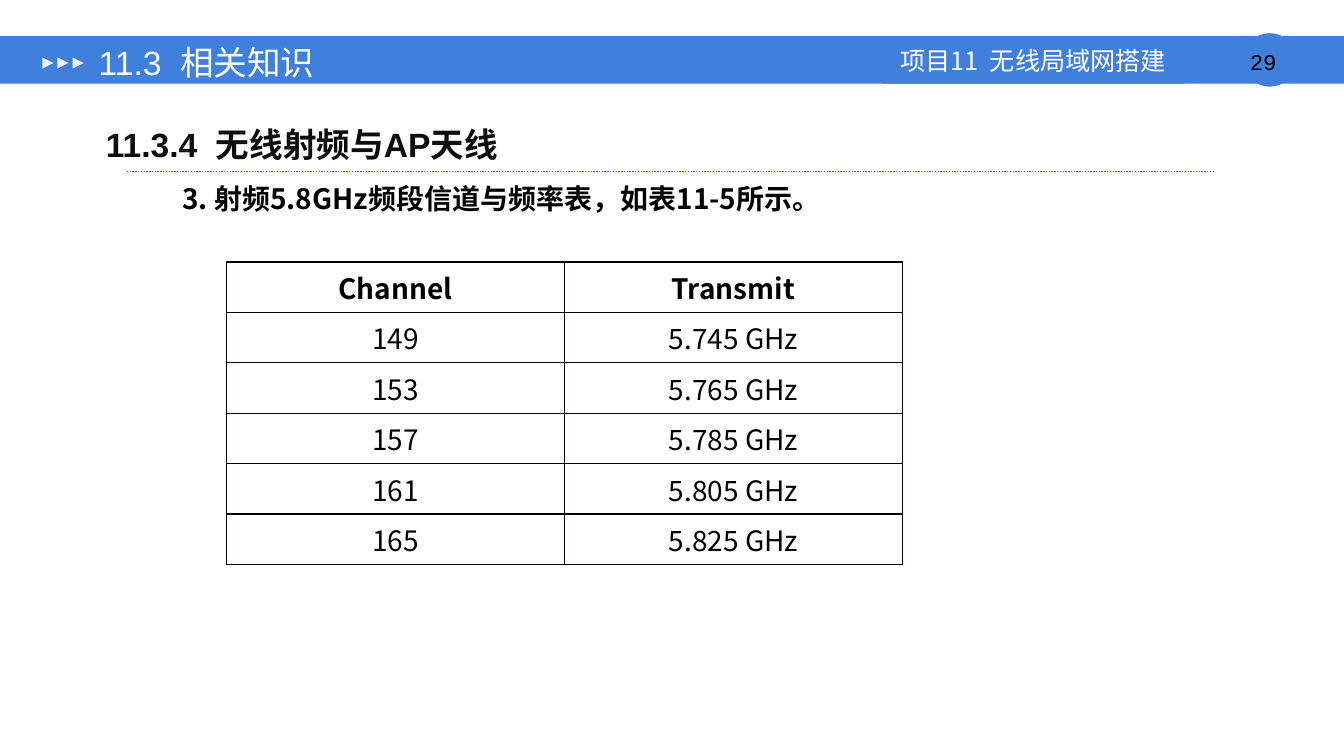
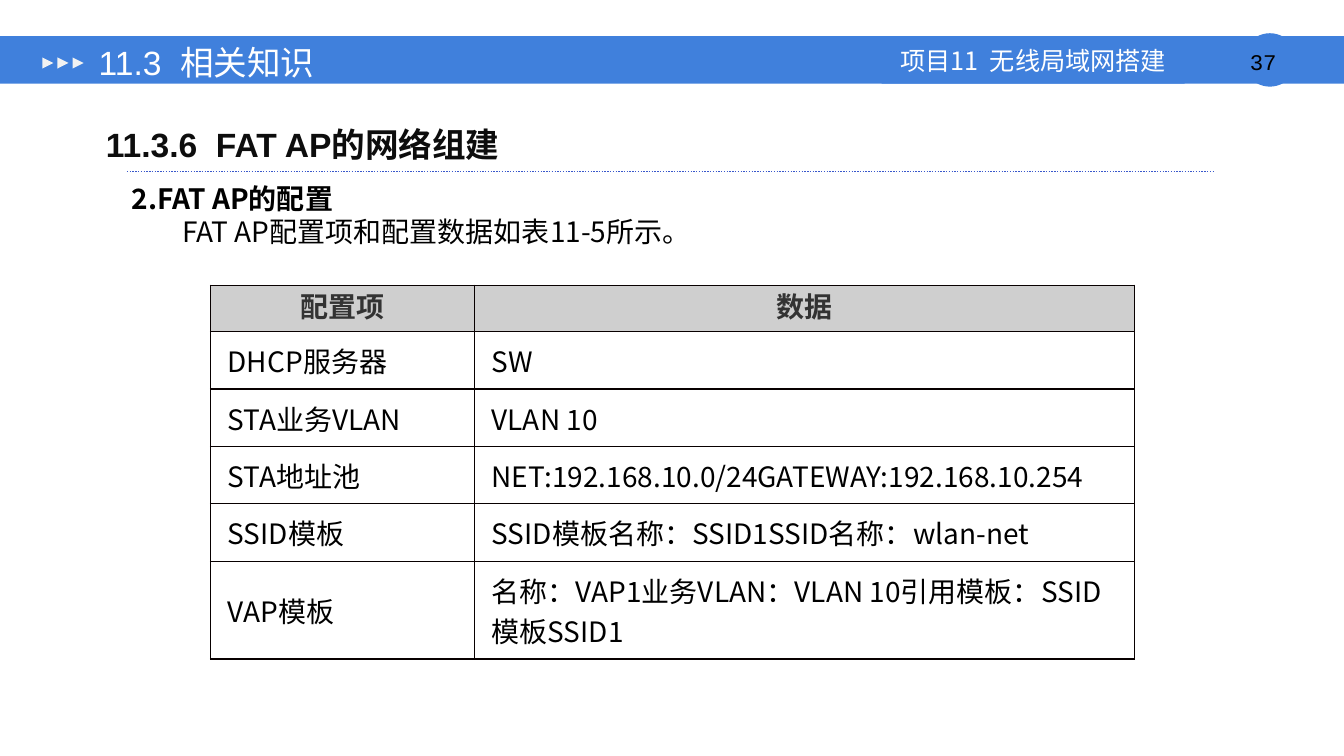
"""Build two lesson slides on wireless channels and FAT AP configuration."""
import lxml.etree
import pptx
import pptx.dml.color
import pptx.enum.dml
import pptx.enum.shapes
import pptx.enum.text
import pptx.oxml.ns
import pptx.util

Inches = pptx.util.Inches
Pt = pptx.util.Pt
RGB = pptx.dml.color.RGBColor.from_string
qn = pptx.oxml.ns.qn
Shape = pptx.enum.shapes.MSO_SHAPE
Align = pptx.enum.text.PP_ALIGN
Anchor = pptx.enum.text.MSO_ANCHOR

COLORS = {
    "band": "4080DC", "white": "FFFFFF", "arrow": "F2F2F2", "heading": "0D0D0D",
    "rule": "3958CB", "text": "000000", "border": "080000",
    "header_fill": "CFCFCF", "header_text": "333333",
}
CJK_FONT = "Noto Sans CJK SC"
TITLE = "11.3  相关知识"
PROJECT = "项目11  无线局域网搭建"

PAGES = [
    {
        "number": 29,
        "heading": "11.3.4  无线射频与AP天线",
        "lines": [("3. 射频5.8GHz频段信道与频率表，如表11-5所示。", True, 0.5)],
        "table": {
            "left": 2.25, "top": 2.6, "columns": [3.35, 3.36], "heights": [0.5] * 6,
            "header_fill": "white", "header_text": "text", "header_anchor": Anchor.MIDDLE,
            "align": Align.CENTER, "side": 0.07, "pad": 0,
            "rows": [
                ("Channel", "Transmit"),
                ("149", "5.745 GHz"),
                ("153", "5.765 GHz"),
                ("157", "5.785 GHz"),
                ("161", "5.805 GHz"),
                ("165", "5.825 GHz"),
            ],
        },
    },
    {
        "number": 37,
        "heading": "11.3.6  FAT AP的网络组建",
        "lines": [("2.FAT AP的配置", True, 0), ("FAT AP配置项和配置数据如表11-5所示。", False, 0.5)],
        "table": {
            "left": 2.09, "top": 2.83, "columns": [2.62, 6.55],
            "heights": [0.46] + [0.57] * 4 + [0.97],
            "header_fill": "header_fill", "header_text": "header_text", "header_anchor": Anchor.TOP,
            "align": Align.LEFT, "side": 0.17, "pad": 0.08,
            "rows": [
                ("配置项", "数据"),
                ("DHCP服务器", "SW"),
                ("STA业务VLAN", "VLAN 10"),
                ("STA地址池", "NET:192.168.10.0/24GATEWAY:192.168.10.254"),
                ("SSID模板", "SSID模板名称：SSID1SSID名称：wlan-net"),
                ("VAP模板", "名称：VAP1业务VLAN：VLAN 10引用模板：SSID模板SSID1"),
            ],
        },
    },
]


def write(para, text, size, color, align=Align.LEFT, font=CJK_FONT, bold=False):
    para.text = text
    para.alignment = align
    for span in para.runs:
        span.font.size = Pt(size)
        span.font.name = font
        span.font.bold = bold
        span.font.color.rgb = RGB(COLORS[color])
        east_asian = lxml.etree.Element(qn("a:ea"), typeface=CJK_FONT)
        span.font._element.find(qn("a:latin")).addnext(east_asian)


def add_box(page, position, kind=None, fill=None, margins=(0.1, 0.05), anchor=Anchor.TOP):
    place = [Inches(value) for value in position]
    if kind is None:
        box = page.shapes.add_textbox(*place)
    else:
        box = page.shapes.add_shape(kind, *place)
        box.shadow.inherit = False
        box.fill.solid()
        box.fill.fore_color.rgb = RGB(COLORS[fill])
        box.line.fill.background()
    frame = box.text_frame
    frame.word_wrap = True
    frame.vertical_anchor = anchor
    frame.margin_left = frame.margin_right = Inches(margins[0])
    frame.margin_top = frame.margin_bottom = Inches(margins[1])
    return box


deck = pptx.Presentation()
deck.slide_width = Inches(13.34)
deck.slide_height = Inches(7.5)

for content in PAGES:
    page = deck.slides.add_slide(deck.slide_layouts[6])

    add_box(page, (0, 0.36, 13.34, 0.47), Shape.RECTANGLE, "band")
    add_box(page, (0, 0.84, 13.34, 0.08), Shape.RECTANGLE, "white")
    add_box(page, (12.34, 0.33, 0.53, 0.53), Shape.OVAL, "band")
    number = add_box(page, (12.34, 0.48, 0.53, 0.27), Shape.RECTANGLE, "band", (0, 0))
    write(number.text_frame.paragraphs[0], f"{content['number']} ", 16, "text",
          Align.CENTER, "Courier New")
    project = add_box(page, (8.75, 0.36, 3.01, 0.47), Shape.RECTANGLE, "band",
                      anchor=Anchor.MIDDLE)
    write(project.text_frame.paragraphs[0], PROJECT, 18, "white", Align.CENTER)
    for index in range(3):
        arrow = add_box(page, (0.42 + 0.15 * index, 0.57, 0.11, 0.11),
                        Shape.ISOSCELES_TRIANGLE, "arrow")
        arrow.rotation = 90

    title = add_box(page, (0.85, 0.4, 7.2, 0.44), margins=(0.13, 0.07), anchor=Anchor.MIDDLE)
    write(title.text_frame.paragraphs[0], TITLE, 24, "white", font="Arial")
    heading = add_box(page, (0.92, 1.08, 11.75, 0.51), margins=(0.13, 0.07))
    para = heading.text_frame.paragraphs[0]
    para.line_spacing = 1.2
    para.space_before = Pt(4.8)
    write(para, content["heading"], 24, "heading", font="Arial", bold=True)

    rule = page.shapes.add_connector(pptx.enum.shapes.MSO_CONNECTOR.STRAIGHT,
                                     Inches(1.26), Inches(1.7), Inches(12.06), Inches(1.7))
    rule.line.color.rgb = RGB(COLORS["rule"])
    rule.line.width = Pt(1)
    rule.line.dash_style = pptx.enum.dml.MSO_LINE.ROUND_DOT
    lxml.etree.SubElement(rule._element.spPr, qn("a:effectLst"))

    body = add_box(page, (1.21, 1.75, 11, 0.75)).text_frame
    for index, (text, bold, indent) in enumerate(content["lines"]):
        para = body.add_paragraph() if index else body.paragraphs[0]
        write(para, text, 20, "text", Align.JUSTIFY, bold=bold)
        para._p.get_or_add_pPr().set("indent", str(Inches(indent)))

    layout = content["table"]
    rows, columns, heights = layout["rows"], layout["columns"], layout["heights"]
    table = page.shapes.add_table(
        len(rows), len(columns), Inches(layout["left"]), Inches(layout["top"]),
        Inches(sum(columns)), Inches(sum(heights))).table
    table.first_row = table.horz_banding = False
    for column, width in zip(table.columns, columns):
        column.width = Inches(width)
    for row_index, (row, height) in enumerate(zip(table.rows, heights)):
        row.height = Inches(height)
        header = row_index == 0
        for cell, text in zip(row.cells, rows[row_index]):
            cell.margin_left = cell.margin_right = Inches(layout["side"])
            cell.margin_top = cell.margin_bottom = Inches(0 if header else layout["pad"])
            cell.vertical_anchor = layout["header_anchor"] if header else Anchor.MIDDLE
            properties = cell._tc.get_or_add_tcPr()
            for side in ("lnL", "lnR", "lnT", "lnB"):
                border = lxml.etree.SubElement(properties, qn(f"a:{side}"), w=str(Pt(1)))
                paint = lxml.etree.SubElement(border, qn("a:solidFill"))
                lxml.etree.SubElement(paint, qn("a:srgbClr"), val=COLORS["border"])
            cell.fill.solid()
            cell.fill.fore_color.rgb = RGB(COLORS[layout["header_fill"] if header else "white"])
            write(cell.text_frame.paragraphs[0], text, 20,
                  layout["header_text"] if header else "text",
                  Align.CENTER if header else layout["align"], bold=header)

deck.save("out.pptx")
